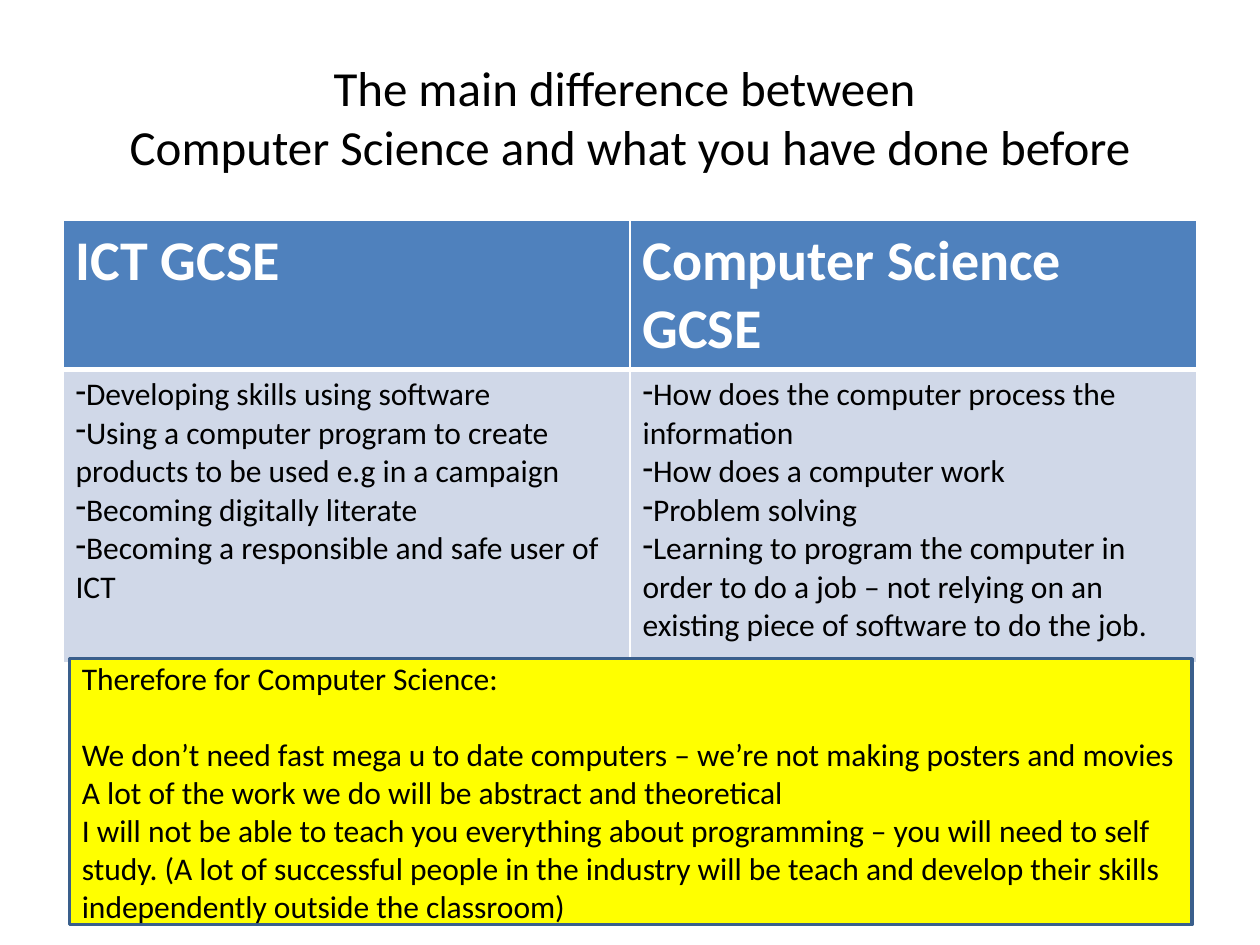
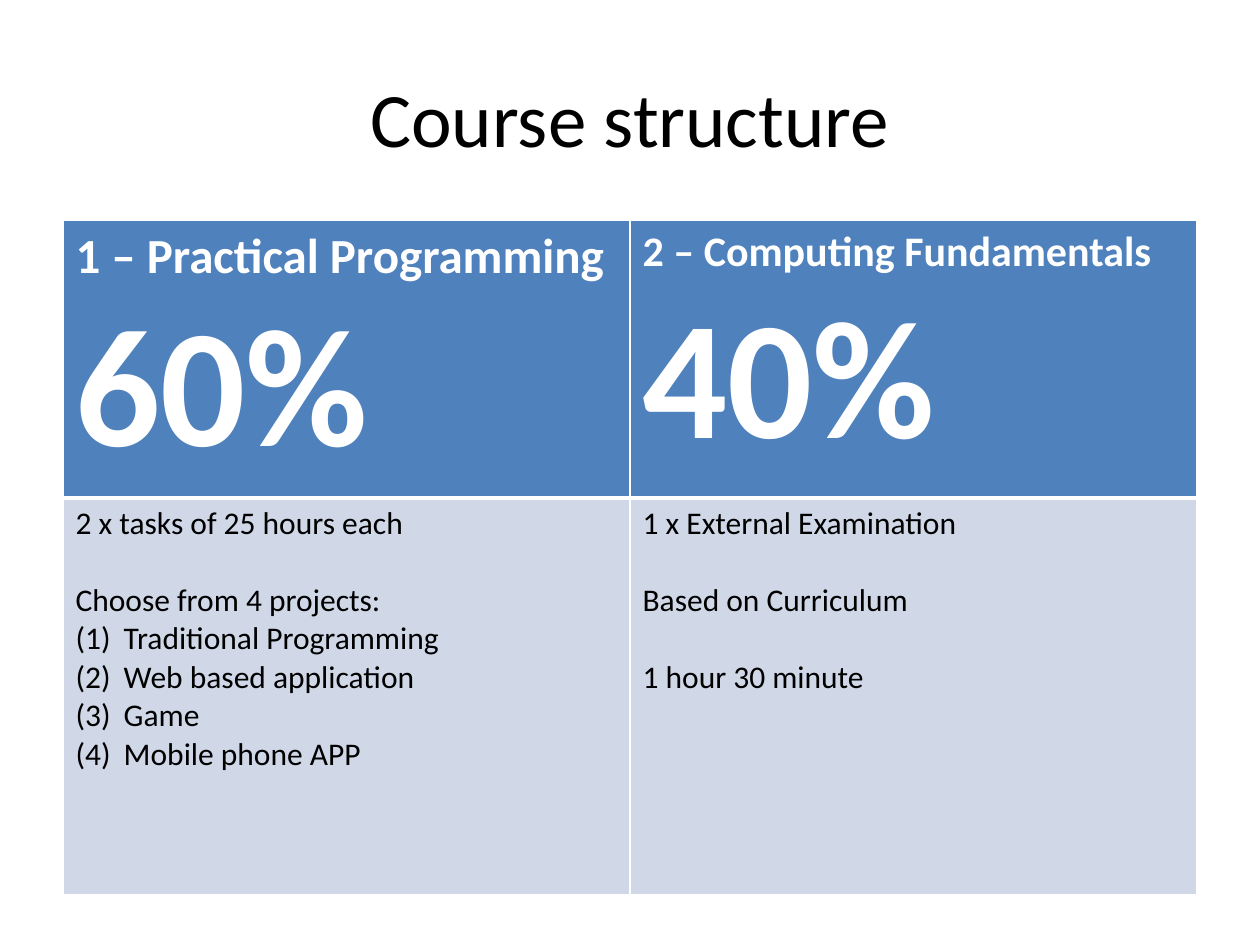
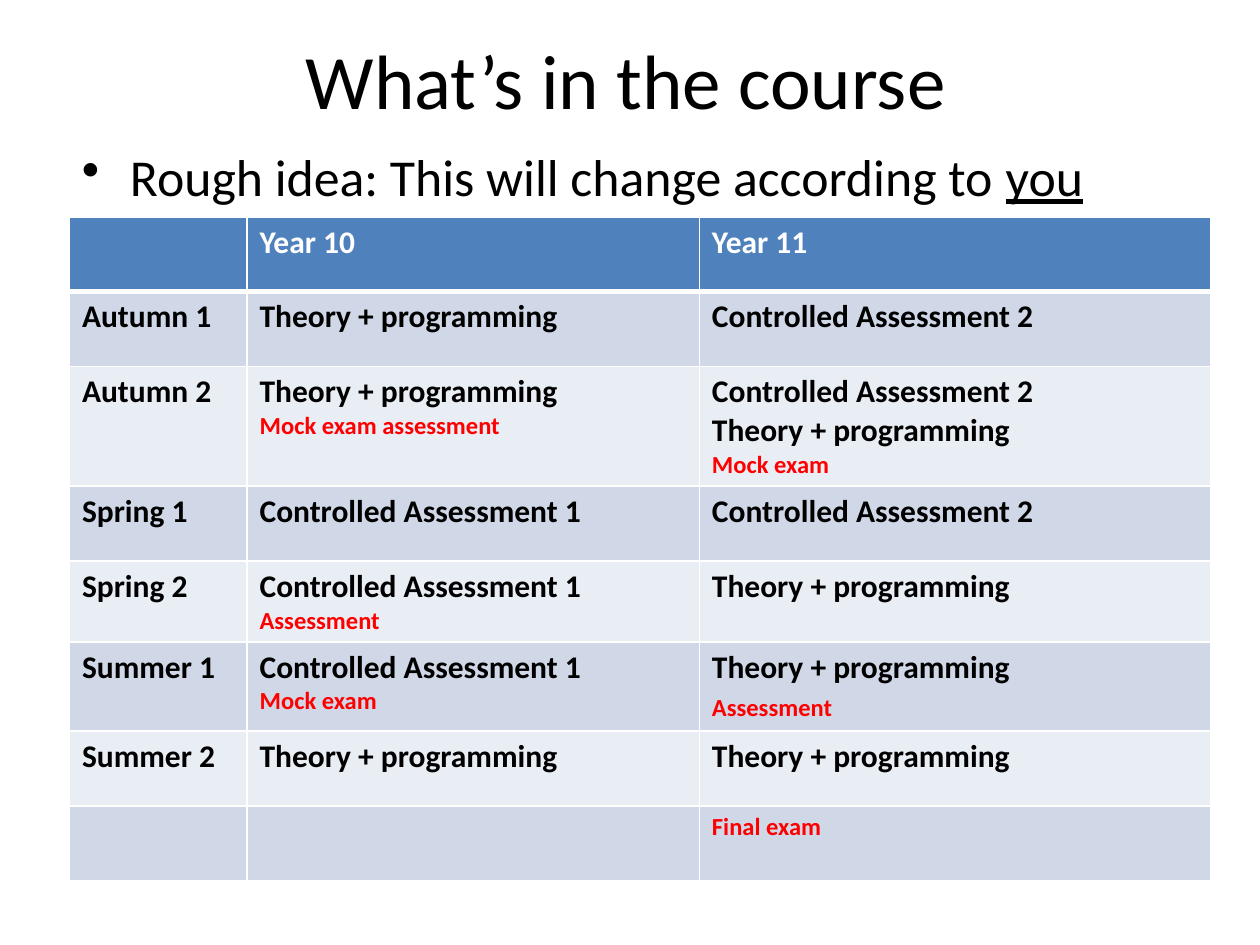
from lxml.etree import SubElement
from pptx import Presentation
from pptx.dml.color import RGBColor
from pptx.enum.shapes import MSO_SHAPE
from pptx.enum.text import MSO_ANCHOR, PP_ALIGN
from pptx.oxml.ns import qn
from pptx.util import Cm, Pt

COLORS = {
    "black": "000000", "white": "FFFFFF", "red": "FF0000", "yellow": "FFFF00",
    "header": "4F81BD", "band": "D0D8E8", "light": "E9EDF4", "outline": "3A5F8C",
}
BODY = {"size": Pt(18), "bold": False}
HEAD = {"size": Pt(18), "bold": True}
GAP = Pt(22)
HANG = Cm(0.97)


def write(tf, lines, fmt, color, align=PP_ALIGN.LEFT):
    tf.word_wrap = True
    for i, line in enumerate(lines):
        line = {"text": line} if isinstance(line, str) else line
        p = tf.paragraphs[0] if i == 0 else tf.add_paragraph()
        p.text = line["text"]
        p.alignment = align
        if "gap" in line:
            p.space_before = line["gap"]
        pPr = p._p.get_or_add_pPr()
        if "hang" in line:
            pPr.set("marL", str(line["hang"]))
            pPr.set("indent", str(-line["hang"]))
        if "char" in line:
            SubElement(pPr, qn("a:buChar"), char=line["char"])
        if "number" in line:
            SubElement(pPr, qn("a:buAutoNum"), type=line["number"])
        styles = [{**fmt, **line.get("font", {})}] * len(p.runs)
        if "tail" in line:
            r = p.add_run()
            r.text, extra = line["tail"]
            styles.append({**fmt, **extra})
        for r, style in zip(p.runs, styles):
            for name, value in {"name": "Calibri", **style}.items():
                setattr(r.font, name, value)
            r.font.color.rgb = RGBColor.from_string(COLORS[line.get("color", color)])


def paint_cell(cell, fill, bottom, top):
    cell.fill.solid()
    cell.fill.fore_color.rgb = RGBColor.from_string(COLORS[fill])
    tcPr = cell._tc.get_or_add_tcPr()
    for i, (side, width) in enumerate({"L": 1, "R": 1, "T": top, "B": bottom}.items()):
        ln = SubElement(tcPr, qn(f"a:ln{side}"), w=str(Pt(width)))
        SubElement(SubElement(ln, qn("a:solidFill")), qn("a:srgbClr"), val=COLORS["white"])
        tcPr.insert(i, ln)


theory = "Theory + programming"
exam_note = {"color": "red", "font": {"size": Pt(14)}}
big = {"font": {"size": Pt(96)}}
dash = {"char": "-"}
numbered = {"hang": HANG, "number": "arabicParenBoth"}

difference = [
    [[{"text": "ICT GCSE", "font": {"size": Pt(32)}}],
     [{"text": "Computer Science GCSE", "font": {"size": Pt(32)}}]],
    [[{"text": t, **dash} for t in (
        "Developing skills using software",
        "Using a computer program to create products to be used e.g in a campaign",
        "Becoming digitally literate",
        "Becoming a responsible and safe user of ICT")],
     [{"text": t, **dash} for t in (
         "How does the computer process the information",
         "How does a computer work",
         "Problem solving",
         "Learning to program the computer in order to do a job – not relying on an "
         "existing piece of software to do the job.")]],
]
structure = [
    [[{"text": "1 – Practical Programming", "font": {"size": Pt(28)}}, {"text": "60%", **big}],
     [{"text": "2 – Computing Fundamentals", "font": {"size": Pt(24)}}, {"text": "40%", **big}]],
    [["2 x tasks of 25 hours each", {"text": "Choose from 4 projects:", "gap": GAP}]
     + [{"text": t, **numbered} for t in (
         "Traditional Programming", "Web based application", "Game", "Mobile phone APP")],
     ["1 x External Examination", {"text": "Based on Curriculum", "gap": GAP},
      {"text": "1 hour 30 minute", "gap": GAP}]],
]
timetable = [
    [[], ["Year 10"], ["Year 11"]],
    [["Autumn 1"], [theory], ["Controlled Assessment 2"]],
    [["Autumn 2"], [theory, {"text": "Mock exam assessment", **exam_note}],
     ["Controlled Assessment 2", theory, {"text": "Mock exam", **exam_note}]],
    [["Spring 1"], ["Controlled Assessment 1"], ["Controlled Assessment 2"]],
    [["Spring 2"], ["Controlled Assessment 1", {"text": "Assessment", **exam_note}], [theory]],
    [["Summer 1"], ["Controlled Assessment 1", {"text": "Mock exam", **exam_note}],
     [theory, {"text": "Assessment", "tail": (" ", {}), **exam_note}]],
    [["Summer 2"], [theory], [theory]],
    [[], [], [{"text": "Final exam", **exam_note}]],
]

pages = [
    {"title": "The main difference between \nComputer Science and what you have done before",
     "size": 28, "at": (1.27, 0.76), "grid": difference, "grid_at": (1.27, 4.45),
     "cols": [11.43, 11.43], "rows": [3, 5.92], "body": BODY},
    {"title": "Course structure",
     "size": 44, "at": (1.27, 0.76), "grid": structure, "grid_at": (1.27, 4.45),
     "cols": [11.43, 11.43], "rows": [5.59, 8], "body": BODY},
    {"title": "What’s in the course",
     "size": 44, "at": (1.19, 0), "grid": timetable, "grid_at": (1.4, 4.37),
     "cols": [3.58, 9.12, 10.31], "rows": [1.51, 1.51, 2.41, 1.51, 1.63, 1.8, 1.51, 1.51],
     "body": HEAD},
]

prs = Presentation()
prs.slide_width, prs.slide_height = Cm(25.4), Cm(19.05)

for page in pages:
    s = prs.slides.add_slide(prs.slide_layouts[6])
    left, top = page["at"]
    tf = s.shapes.add_textbox(Cm(left), Cm(top), Cm(22.86), Cm(3.18)).text_frame
    tf.vertical_anchor = MSO_ANCHOR.MIDDLE
    write(tf, [page["title"]], {"size": Pt(page["size"])}, "black", PP_ALIGN.CENTER)

    left, top = page["grid_at"]
    cols, rows = page["cols"], page["rows"]
    table = s.shapes.add_table(len(rows), len(cols), Cm(left), Cm(top),
                               Cm(sum(cols)), Cm(sum(rows))).table
    for column, width in zip(table.columns, cols):
        column.width = Cm(width)
    for i, (row, height) in enumerate(zip(table.rows, rows)):
        row.height = Cm(height)
        fill = "header" if i == 0 else "band" if i % 2 else "light"
        for cell, lines in zip(row.cells, page["grid"][i]):
            paint_cell(cell, fill, bottom=3 if i == 0 else 1, top=3 if i == 1 else 1)
            write(cell.text_frame, lines, page["body"] if i else HEAD,
                  "black" if i else "white")

sp = prs.slides[0].shapes.add_shape(MSO_SHAPE.RECTANGLE, Cm(1.4), Cm(13.28), Cm(22.63), Cm(5.36))
sp.shadow.inherit = False
sp.fill.solid()
sp.fill.fore_color.rgb = RGBColor.from_string(COLORS["yellow"])
sp.line.color.rgb = RGBColor.from_string(COLORS["outline"])
sp.line.width = Pt(2)
sp.text_frame.vertical_anchor = MSO_ANCHOR.MIDDLE
write(sp.text_frame, [
    "Therefore for Computer Science:",
    {"text": "We don’t need fast mega u to date computers – we’re not making posters and movies",
     "gap": GAP},
    "A lot of the work we do will be abstract and theoretical",
    "I will not be able to teach you everything about programming – you will need to self "
    "study. (A lot of successful people in the industry will be teach and develop their "
    "skills independently outside the classroom)",
], BODY, "black")

tf = prs.slides[2].shapes.add_textbox(Cm(1.4), Cm(2.8), Cm(22.86), Cm(1.4)).text_frame
write(tf, [{"text": "Rough idea: This will change according to ", "hang": HANG, "char": "•",
            "tail": ("you", {"underline": True})}], {"size": Pt(29.6)}, "black")

prs.save("out.pptx")
